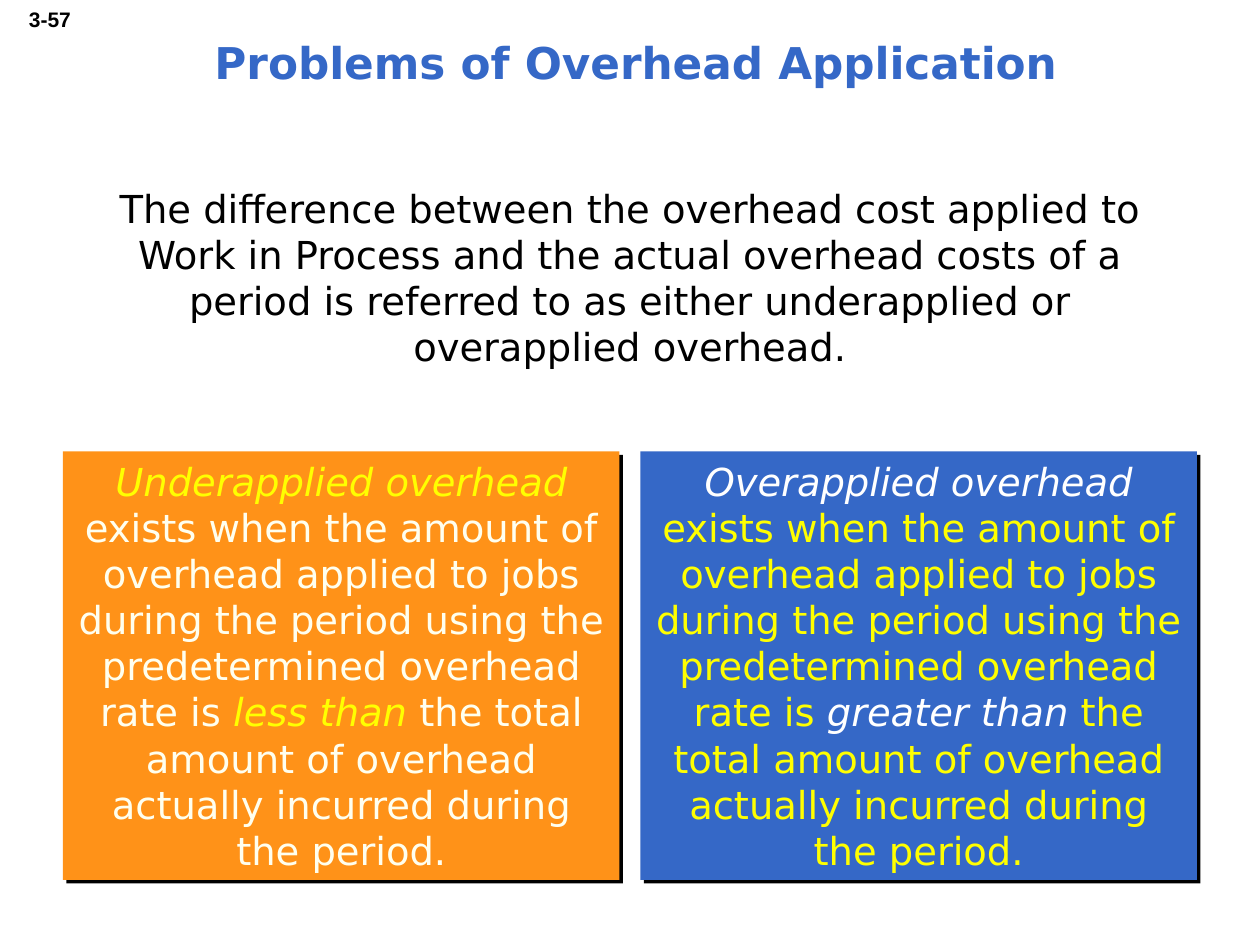
from lxml.etree import SubElement
from pptx import Presentation
from pptx.dml.color import RGBColor
from pptx.enum.shapes import MSO_SHAPE as Shape
from pptx.enum.text import MSO_ANCHOR as Anchor, MSO_AUTO_SIZE as Fit, PP_ALIGN as Align
from pptx.oxml.ns import qn
from pptx.util import Cm, Pt

BLACK = RGBColor(0x00, 0x00, 0x00)
WHITE = RGBColor(0xFF, 0xFF, 0xFF)
CREAM = RGBColor(0xFF, 0xFF, 0xEF)
YELLOW = RGBColor(0xFF, 0xFF, 0x00)
ORANGE = RGBColor(0xFF, 0x92, 0x18)
BLUE = RGBColor(0x35, 0x68, 0xC7)

FACE = "DejaVu Sans"
INTRO = ("The difference between the overhead cost applied to Work in Process "
         "and the actual overhead costs of a period is referred to as either "
         "underapplied or overapplied overhead.")
RULE = (" exists when the amount of overhead applied to jobs during the period "
        "using the predetermined overhead rate is ")
END = " the total amount of overhead actually incurred during the period."

# term, comparison, fill, text colour, accent colour
CARDS = [
    ("Underapplied overhead", "less than", ORANGE, CREAM, YELLOW),
    ("Overapplied overhead", "greater than", BLUE, YELLOW, WHITE),
]


def place(shape, box):
    shape.left, shape.top, shape.width, shape.height = map(Cm, box)


def style(para, size, color=None, face=FACE, bold=False, align=Align.CENTER):
    para.alignment = align
    font = para.font
    font.name, font.size, font.bold = face, Pt(size), bold
    if color is not None:
        font.color.rgb = color


def add_text(slide, box, text, wrap=True):
    """Add a text box that grows with its text; return its paragraph."""
    shape = slide.shapes.add_textbox(*map(Cm, box))
    frame = shape.text_frame
    frame.word_wrap = wrap
    frame.auto_size = Fit.SHAPE_TO_FIT_TEXT
    frame.text = text
    return frame.paragraphs[0]


def add_title(slide, box, text):
    title = slide.shapes.title
    place(title, box)
    frame = title.text_frame
    frame.text = text
    frame.vertical_anchor = Anchor.MIDDLE
    style(frame.paragraphs[0], 25, BLUE, bold=True)


def add_shadow(shape):
    """Cast a hard black shadow down and to the right."""
    shape.shadow.inherit = False
    effects = shape._element.spPr.find(qn("a:effectLst"))
    outer = SubElement(effects, qn("a:outerShdw"), dist=str(Pt(2.8)),
                       dir=str(45 * 60000), algn="ctr", rotWithShape="0")
    SubElement(outer, qn("a:srgbClr"), val=str(BLACK))


def add_card(slide, box, term, than, fill, color, accent):
    card = slide.shapes.add_shape(Shape.RECTANGLE, *map(Cm, box))
    card.fill.solid()
    card.fill.fore_color.rgb = fill
    card.line.fill.background()
    add_shadow(card)
    frame = card.text_frame
    frame.word_wrap = True
    frame.auto_size = Fit.SHAPE_TO_FIT_TEXT
    frame.vertical_anchor = Anchor.TOP
    para = frame.paragraphs[0]
    style(para, 22)
    for text, key in ((term, True), (RULE, False), (than, True), (END, False)):
        run = para.add_run()
        run.text = text
        run.font.italic = key
        run.font.color.rgb = accent if key else color


def add_cards(slide, box, gap):
    """Share the box out among cards of equal width."""
    left, top, width, height = box
    step = (width + gap) / len(CARDS)
    for i, card in enumerate(CARDS):
        add_card(slide, (left + i * step, top, step - gap, height), *card)


def main():
    deck = Presentation()
    deck.slide_width, deck.slide_height = Cm(25.4), Cm(19.05)
    slide = deck.slides.add_slide(deck.slide_layouts[5])
    number = add_text(slide, (0.28, 0, 1.4, 0.76), "3-57", wrap=False)
    style(number, 12, BLACK, "Arial", bold=True, align=Align.RIGHT)
    add_title(slide, (0.43, 0.2, 24.77, 2.1), "Problems of Overhead Application")
    intro = add_text(slide, (1.48, 3.6, 22.43, 4), INTRO)
    style(intro, 22, BLACK)
    add_cards(slide, (1.27, 9.1, 22.86, 8.64), gap=0.42)
    deck.save("out.pptx")


if __name__ == "__main__":
    main()
